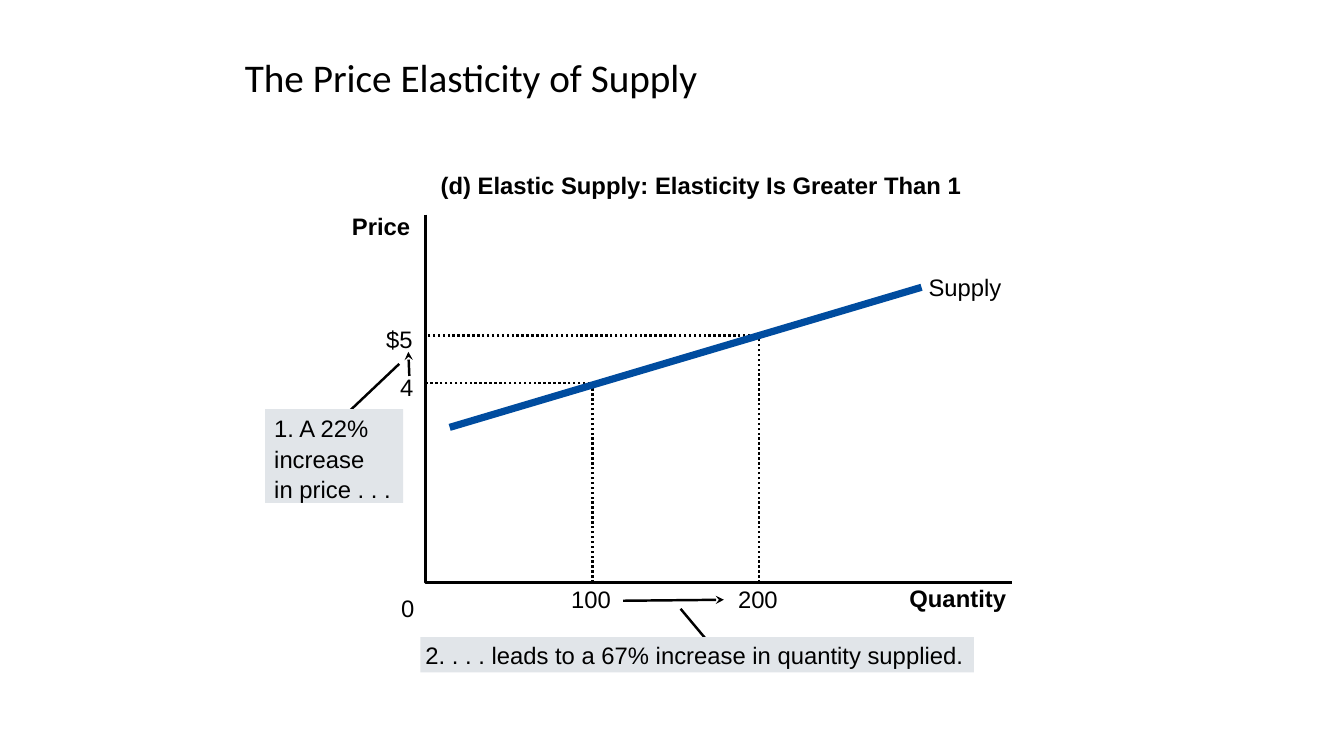
from lxml.etree import SubElement
from pptx import Presentation
from pptx.dml.color import RGBColor
from pptx.enum.dml import MSO_LINE
from pptx.enum.shapes import MSO_CONNECTOR, MSO_SHAPE
from pptx.enum.text import MSO_ANCHOR, MSO_AUTO_SIZE, PP_ALIGN
from pptx.oxml.ns import qn
from pptx.util import Inches, Pt

CELL = Inches(0.1)
COLORS = {"ink": "000000", "supply": "004C9F", "callout": "E1E5E9"}
AXIS_LEFT, AXIS_TOP, AXIS_RIGHT, AXIS_BASE = 42.2, 21.3, 100.4, 57.8
LABEL_ROWS = 2.9


def cells(*counts):
    return [round(count * CELL) for count in counts]


def color(name):
    return RGBColor.from_string(COLORS[name])


def quantity_column(quantity):
    return AXIS_LEFT + 16.55 * quantity / 100


def price_row(price):
    return 38 - 4.7 * (price - 4)


def style_line(line, ink="ink", width=1.75, dash=None):
    line.color.rgb = color(ink)
    for name, value in {"width": Pt(width), "dash_style": dash}.items():
        setattr(line, name, value)


def write(frame, lines, size=17, font="Arial", bold=False, spacing=None, after=0):
    frame.text = "\n".join(lines)
    for paragraph in frame.paragraphs:
        paragraph.alignment = PP_ALIGN.LEFT
        paragraph.line_spacing = spacing
        paragraph.space_after = Pt(after)
        style = {"size": Pt(size), "name": font, "bold": bold}
        for name, value in style.items():
            setattr(paragraph.font, name, value)
        paragraph.font.color.rgb = color("ink")


def set_frame(frame, left=0, top=0, **options):
    margins = {"margin_left": cells(left)[0], "margin_top": cells(top)[0],
               "margin_right": 0, "margin_bottom": 0}
    for name, value in {**margins, **options}.items():
        setattr(frame, name, value)


def add_title(slide, text):
    frame = slide.shapes.add_textbox(*cells(23.3, 4.6, 88.4, 7)).text_frame
    set_frame(frame, left=1, word_wrap=True, vertical_anchor=MSO_ANCHOR.MIDDLE)
    write(frame, [text], size=28, font="Calibri", spacing=0.8)


def add_label(slide, text, left, top, width, bold=False):
    box = slide.shapes.add_textbox(*cells(left, top, width, LABEL_ROWS))
    set_frame(box.text_frame, word_wrap=False, auto_size=MSO_AUTO_SIZE.SHAPE_TO_FIT_TEXT)
    write(box.text_frame, [text], bold=bold)


def add_segment(slide, start, end, arrow=False, **style):
    segment = slide.shapes.add_connector(MSO_CONNECTOR.STRAIGHT, *cells(*start, *end))
    style_line(segment.line, **style)
    properties = segment._element.spPr
    SubElement(properties, qn("a:effectLst"))
    if arrow:
        SubElement(properties.find(qn("a:ln")), qn("a:headEnd"), type="stealth")


def add_bent_line(slide, points, **style):
    start, *rest = [cells(*point) for point in points]
    builder = slide.shapes.build_freeform(*start)
    builder.add_line_segments(rest, close=False)
    bent = builder.convert_to_shape()
    bent.shadow.inherit = False
    bent.fill.background()
    style_line(bent.line, **style)


def add_callout(slide, lines, area, inset, pointer):
    add_segment(slide, *pointer)
    callout = slide.shapes.add_shape(MSO_SHAPE.RECTANGLE, *cells(*area))
    callout.shadow.inherit = False
    callout.fill.solid()
    callout.fill.fore_color.rgb = color("callout")
    callout.line.fill.background()
    set_frame(callout.text_frame, *inset, word_wrap=True, vertical_anchor=MSO_ANCHOR.TOP)
    write(callout.text_frame, lines, after=1.35)


def add_guide(slide, price, price_text, price_width, quantity):
    column, row = quantity_column(quantity), price_row(price)
    add_bent_line(slide, [(column, AXIS_BASE), (column, row), (AXIS_LEFT, row)],
                  dash=MSO_LINE.ROUND_DOT)
    add_label(slide, price_text, 41 - price_width, row - 1.05, price_width)
    add_label(slide, str(quantity), column - 2.1, AXIS_BASE + 0.2, 4)


def main():
    deck = Presentation()
    deck.slide_width, deck.slide_height = Inches(13.33), Inches(7.5)
    slide = deck.slides.add_slide(deck.slide_layouts[6])

    add_title(slide, "The Price Elasticity of Supply")
    add_bent_line(slide, [(AXIS_LEFT, AXIS_TOP), (AXIS_LEFT, AXIS_BASE),
                          (AXIS_RIGHT, AXIS_BASE)])
    add_segment(slide, (40.5, 34.9), (40.6, 37.3), arrow=True)
    add_segment(slide, (71.8, 59.5), (61.8, 59.6), arrow=True)

    add_label(slide, "(d) Elastic Supply: Elasticity Is Greater Than 1",
              43.7, 16.9, 52.2, bold=True)
    add_label(slide, "Quantity", 90.2, 57.9, 9.7, bold=True)
    add_label(slide, "0", 39.8, 58.9, 1.3)
    add_label(slide, "Price", 34.9, 21, 5.9, bold=True)

    add_callout(slide, ["1. A 22%", "increase", "in price . . ."],
                (26.3, 40.6, 13.7, 9.3), (0.9, 0.5), ((33.9, 41.5), (39.6, 36.1)))
    add_callout(slide, ["2. . . . leads to a 67% increase in quantity supplied."],
                (41.7, 63.2, 54.9, 3.5), (0.5, 0.4), ((67.5, 60.4), (70.1, 63.5)))

    add_guide(slide, 4, "4", 1.3, 100)
    add_guide(slide, 5, "$5", 2.7, 200)
    add_segment(slide, (91.4, 28.5), (44.6, 42.4), ink="supply", width=5.13)
    add_label(slide, "Supply", 92.1, 27.1, 7.3)

    deck.save("out.pptx")


if __name__ == "__main__":
    main()
